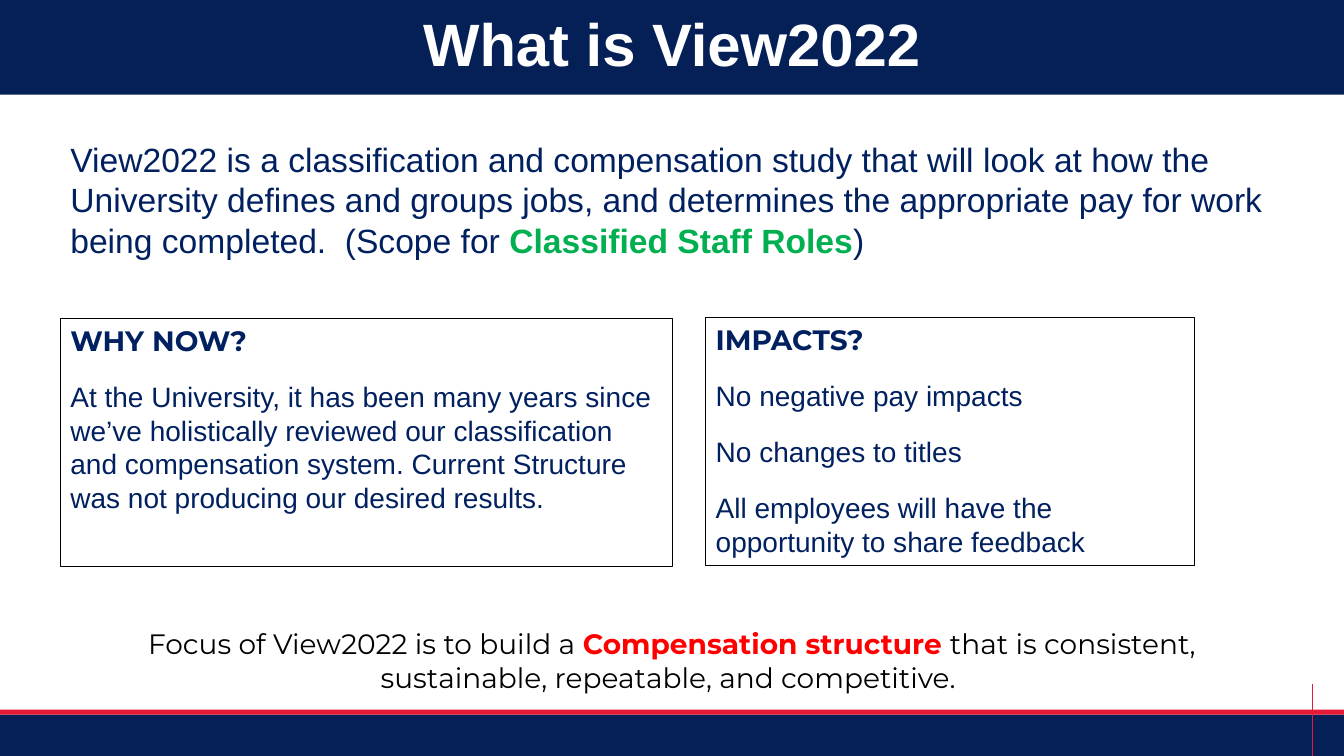
from dataclasses import dataclass

from lxml import etree
from pptx import Presentation
from pptx.dml.color import RGBColor
from pptx.enum.shapes import MSO_CONNECTOR, MSO_SHAPE
from pptx.enum.text import MSO_ANCHOR, PP_ALIGN
from pptx.oxml.ns import qn
from pptx.util import Inches, Pt

RECT = MSO_SHAPE.RECTANGLE
STRAIGHT = MSO_CONNECTOR.STRAIGHT
TOP, MIDDLE = MSO_ANCHOR.TOP, MSO_ANCHOR.MIDDLE
LEFT, CENTER = PP_ALIGN.LEFT, PP_ALIGN.CENTER


@dataclass(frozen=True)
class Theme:
    navy: str = "052057"
    red: str = "E61937"
    ink: str = "002060"
    black: str = "000000"
    white: str = "FFFFFF"
    green: str = "00B050"
    alert: str = "FF0000"
    title_size: float = 42.7
    intro_size: float = 24
    body_size: float = 20
    sans: str = "Arial"
    accent: str = "Montserrat"


T = Theme()
WIDTH, HEIGHT = 13.33, 7.5


def add_box(box, fill=None, line=None):
    sp = s.shapes.add_shape(RECT, *map(Inches, box))
    sp.shadow.inherit = False
    if fill:
        sp.fill.solid()
        sp.fill.fore_color.rgb = RGBColor.from_string(fill)
    else:
        sp.fill.background()
    if line:
        sp.line.color.rgb = RGBColor.from_string(line)
        sp.line.width = Pt(0.75)
    else:
        sp.line.fill.background()
    return sp


def write(sp, paragraphs, anchor=TOP, **paragraph_format):
    """Fill a shape with paragraphs, each a list of (text, font, size, colour, bold)."""
    tf = sp.text_frame
    tf.word_wrap = True
    tf.vertical_anchor = anchor
    for i, runs in enumerate(paragraphs):
        p = tf.add_paragraph() if i else tf.paragraphs[0]
        for name, value in paragraph_format.items():
            setattr(p, name, value)
        for text, font, size, color, bold in runs:
            r = p.add_run()
            r.text = text
            for name, value in {"name": font, "size": Pt(size), "bold": bold}.items():
                setattr(r.font, name, value)
            r.font.color.rgb = RGBColor.from_string(color)


prs = Presentation()
prs.slide_width, prs.slide_height = Inches(WIDTH), Inches(HEIGHT)
s = prs.slides.add_slide(prs.slide_layouts[6])

# Footer
add_box((0, 7.09, WIDTH, 0.41), T.navy)
tick = s.shapes.add_connector(STRAIGHT, Inches(13.02), Inches(6.79), Inches(13.02), Inches(HEIGHT))
tick.line.color.rgb = RGBColor.from_string(T.red)
tick.line.width = Pt(0.5)
etree.SubElement(tick._element.spPr, qn("a:effectLst"))
add_box((0, 7.04, WIDTH, 0.05), T.red)

# Title band
title = add_box((0, 0, WIDTH, 0.94), T.navy)
write(title, [[("What is View2022", T.sans, T.title_size, T.white, True)]],
      MIDDLE, alignment=CENTER, line_spacing=0.9)

# Closing and opening statements
focus = s.shapes.add_textbox(*map(Inches, (0.75, 6.17, 11.83, 0.77)))
write(focus, [[
    ("Focus of View2022 is to build a ", T.accent, T.body_size, T.black, False),
    ("Compensation structure ", T.accent, T.body_size, T.alert, True),
    ("that is consistent, sustainable, repeatable, and competitive. ",
     T.accent, T.body_size, T.black, False),
]], alignment=CENTER)

intro = s.shapes.add_textbox(*map(Inches, (0.6, 1.33, 12.14, 1.31)))
write(intro, [[
    ("View2022 is a classification and compensation study that will look at how the "
     "University defines and groups jobs, and determines the appropriate pay for work "
     "being completed.  (Scope for ", T.sans, T.intro_size, T.ink, False),
    ("Classified Staff Roles", T.sans, T.intro_size, T.green, True),
    (")", T.sans, T.intro_size, T.ink, False),
]], alignment=LEFT, space_after=Pt(16))

# Framed panels
panels = [
    ((0.6, 3.16, 6.07, 2.46), "WHY NOW?", [
        "At the University, it has been many years since we’ve holistically reviewed our "
        "classification and compensation system. Current Structure was not producing our "
        "desired results.",
    ]),
    ((7, 3.15, 4.85, 2.46), "IMPACTS?", [
        "No negative pay impacts",
        "No changes to titles",
        "All employees will have the opportunity to share feedback",
    ]),
]
for box, heading, points in panels:
    rows = [[(heading, T.accent, T.body_size, T.ink, True)]]
    rows += [[(point, T.sans, T.body_size, T.ink, False)] for point in points]
    write(add_box(box, line=T.black), rows, alignment=LEFT, space_after=Pt(16))

prs.save("out.pptx")
